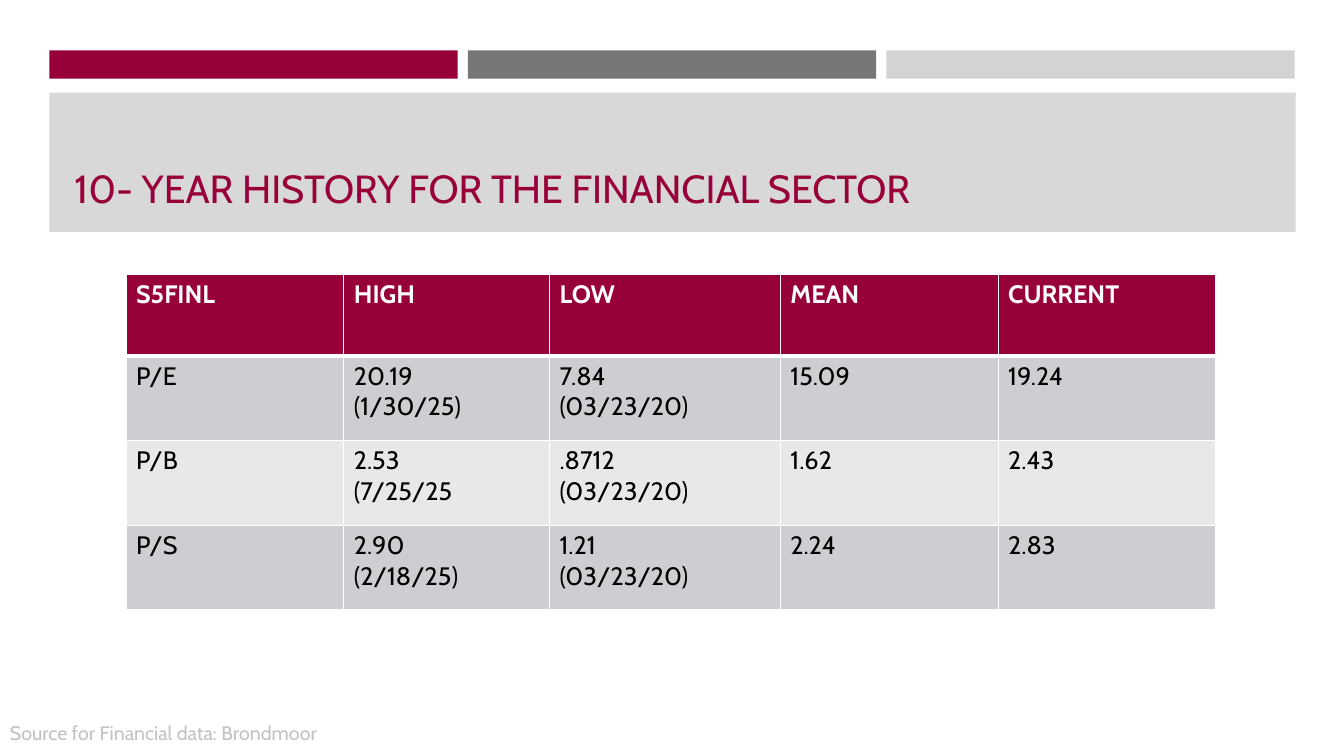
"""Build the slide on the ten-year history of financial sector multiples."""
from dataclasses import dataclass

from lxml.etree import SubElement
from pptx import Presentation
from pptx.dml.color import RGBColor
from pptx.enum.shapes import MSO_SHAPE
from pptx.enum.text import MSO_ANCHOR
from pptx.oxml.ns import qn
from pptx.slide import Slide
from pptx.table import _Cell
from pptx.util import Inches, Pt

FONT = "Cabin"
CRIMSON = RGBColor(0x98, 0x00, 0x39)
GRAY = RGBColor(0x76, 0x76, 0x76)
LIGHT_GRAY = RGBColor(0xD3, 0xD3, 0xD3)
PANEL_GRAY = RGBColor(0xD8, 0xD8, 0xD8)
SOURCE_GRAY = RGBColor(0xC2, 0xC2, 0xC2)
DARK_BAND = RGBColor(0xCD, 0xCE, 0xD2)
LIGHT_BAND = RGBColor(0xE8, 0xE8, 0xEA)
WHITE = RGBColor(0xFF, 0xFF, 0xFF)
BLACK = RGBColor(0x00, 0x00, 0x00)

MARGIN = 0.49
BAR_WIDTH = 4.05
BAR_STEP = 4.15
COLUMN_WIDTHS = (2.16, 2.04, 2.29, 2.16, 2.16)
ROW_HEIGHTS = (0.81, 0.84, 0.84, 0.84)
ROWS = (
    ("S5FINL", "HIGH", "LOW", "MEAN", "CURRENT"),
    ("P/E", "20.19\n(1/30/25)", "7.84\n(03/23/20)", "15.09", "19.24"),
    ("P/B", "2.53\n(7/25/25", ".8712\n(03/23/20)", "1.62", "2.43"),
    ("P/S", "2.90\n(2/18/25)", "1.21\n(03/23/20)", "2.24", "2.83"),
)


@dataclass(frozen=True)
class Block:
    """A filled rectangle, in inches."""
    left: float
    top: float
    width: float
    height: float
    color: RGBColor


@dataclass(frozen=True)
class Label:
    """A line of text in a box, in inches and points."""
    left: float
    top: float
    width: float
    height: float
    text: str
    size: int
    color: RGBColor
    anchor: MSO_ANCHOR


BLOCKS = [
    Block(MARGIN + index * BAR_STEP, 0.5, BAR_WIDTH, 0.28, color)
    for index, color in enumerate((CRIMSON, GRAY, LIGHT_GRAY))
] + [Block(MARGIN, 0.92, 12.36, 1.38, PANEL_GRAY)]

LABELS = (
    Label(0.64, 1.07, 12.06, 1.08, "10- YEAR HISTORY FOR THE FINANCIAL SECTOR",
          28, CRIMSON, MSO_ANCHOR.BOTTOM),
    Label(0, 7.1, 4.87, 0.34, "Source for Financial data: Brondmoor",
          14, SOURCE_GRAY, MSO_ANCHOR.TOP),
)


def draw_block(page: Slide, block: Block) -> None:
    """Draw a rectangle without outline or shadow."""
    shape = page.shapes.add_shape(
        MSO_SHAPE.RECTANGLE, Inches(block.left), Inches(block.top),
        Inches(block.width), Inches(block.height))
    shape.shadow.inherit = False
    shape.fill.solid()
    shape.fill.fore_color.rgb = block.color
    shape.line.fill.background()


def draw_label(page: Slide, label: Label) -> None:
    """Draw a wrapped text box."""
    box = page.shapes.add_textbox(
        Inches(label.left), Inches(label.top),
        Inches(label.width), Inches(label.height))
    frame = box.text_frame
    frame.word_wrap = True
    frame.vertical_anchor = label.anchor
    para = frame.paragraphs[0]
    para.text = label.text
    para.font.name = FONT
    para.font.size = Pt(label.size)
    para.font.color.rgb = label.color


def set_borders(cell: _Cell, top: int, bottom: int) -> None:
    """Give a cell white borders, with side borders of one point."""
    properties = cell._tc.get_or_add_tcPr()
    for side, width in (("L", 1), ("R", 1), ("T", top), ("B", bottom)):
        line = SubElement(properties, qn(f"a:ln{side}"), w=str(Pt(width)))
        fill = SubElement(line, qn("a:solidFill"))
        SubElement(fill, qn("a:srgbClr"), val=str(WHITE))


def fill_cell(cell: _Cell, text: str, row: int) -> None:
    """Write and style one cell according to its row."""
    header = row == 0
    set_borders(cell, top=3 if row == 1 else 1, bottom=3 if header else 1)
    cell.fill.solid()
    band = DARK_BAND if row % 2 else LIGHT_BAND
    cell.fill.fore_color.rgb = CRIMSON if header else band
    cell.text = text
    for para in cell.text_frame.paragraphs:
        para.font.name = FONT
        para.font.size = Pt(18)
        para.font.bold = header
        para.font.color.rgb = WHITE if header else BLACK


def draw_table(page: Slide) -> None:
    """Draw the table of valuation multiples."""
    table = page.shapes.add_table(
        len(ROWS), len(COLUMN_WIDTHS), Inches(1.25), Inches(2.72),
        Inches(sum(COLUMN_WIDTHS)), Inches(sum(ROW_HEIGHTS))).table
    for column, width in zip(table.columns, COLUMN_WIDTHS):
        column.width = Inches(width)
    for row, height in zip(table.rows, ROW_HEIGHTS):
        row.height = Inches(height)
    for row_index, texts in enumerate(ROWS):
        for column_index, text in enumerate(texts):
            fill_cell(table.cell(row_index, column_index), text, row_index)


def main() -> None:
    """Build and save the deck."""
    deck = Presentation()
    deck.slide_width = Inches(13.33)
    deck.slide_height = Inches(7.5)
    page = deck.slides.add_slide(deck.slide_layouts[6])
    for block in BLOCKS:
        draw_block(page, block)
    for label in LABELS:
        draw_label(page, label)
    draw_table(page)
    deck.save("out.pptx")


if __name__ == "__main__":
    main()
